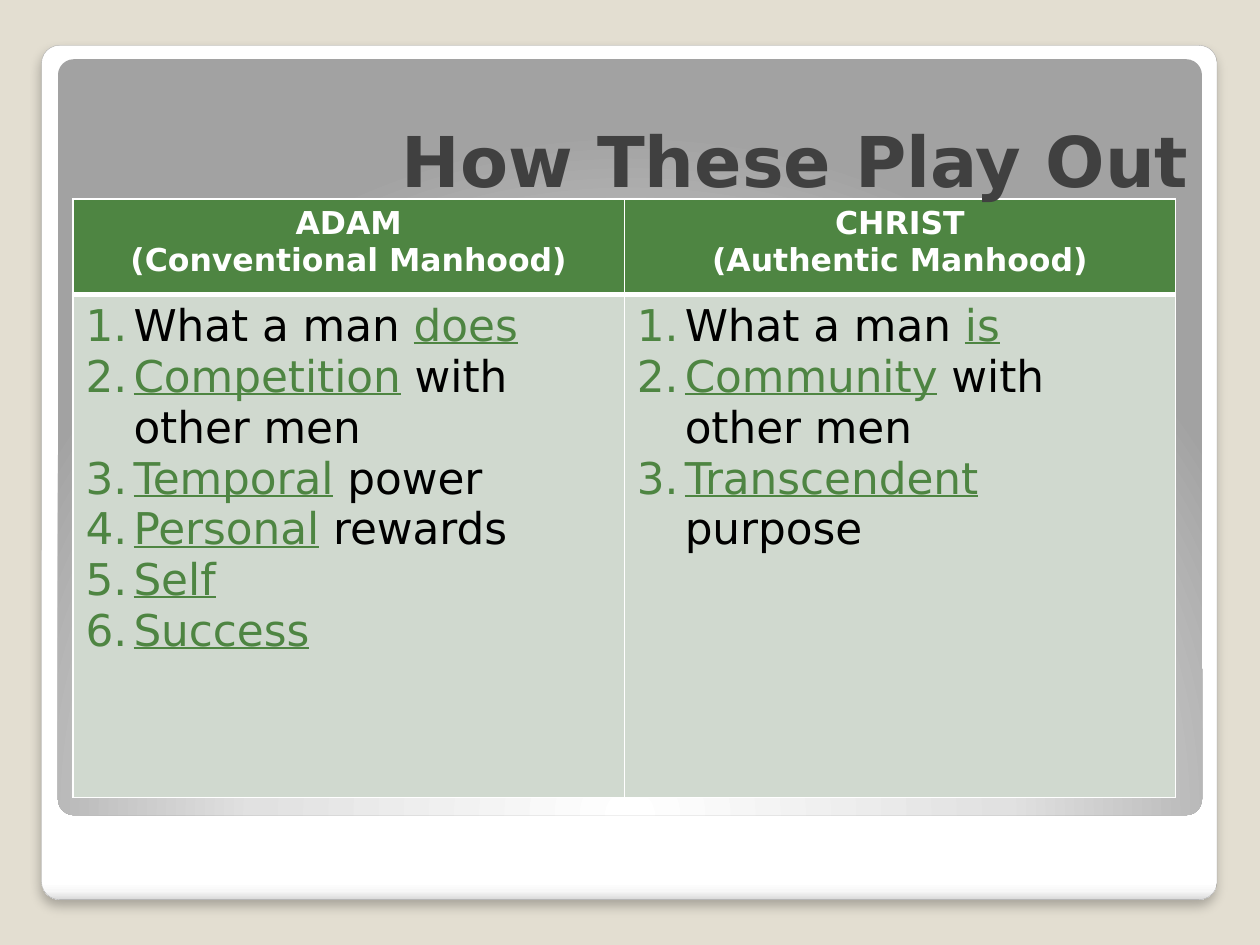
from lxml import etree
from pptx import Presentation
from pptx.dml.color import RGBColor
from pptx.enum.shapes import MSO_SHAPE
from pptx.enum.text import MSO_ANCHOR, PP_ALIGN
from pptx.oxml.ns import qn
from pptx.util import Inches, Pt

ROUND_RECT = MSO_SHAPE.ROUNDED_RECTANGLE
CENTER, RIGHT = PP_ALIGN.CENTER, PP_ALIGN.RIGHT
BOTTOM = MSO_ANCHOR.BOTTOM

FONT = "DejaVu Sans"
GREEN, PALE, WHITE, BLACK = "4E8542", "D0D9CF", "FFFFFF", "000000"

TITLE = "How These Play Out"
# Each column: heading lines, then numbered items; "_" encloses key words.
COLUMNS = [
    (["ADAM", "(Conventional Manhood)"],
     ["What a man _does_", "_Competition_ with other men", "_Temporal_ power",
      "_Personal_ rewards", "_Self_", "_Success_"]),
    (["CHRIST", "(Authentic Manhood)"],
     ["What a man _is_", "_Community_ with other men",
      "_Transcendent_ purpose"]),
]
CARD = (0.33, 0.36, 9.33, 6.78)
PANEL = (0.46, 0.47, 9.08, 6)
TABLE = (0.58, 1.58, 8.75, 4.75)
TITLE_BOX = (0.58, 0.5, 8.95, 1.15)
HEADER_HEIGHT = 0.76
INDENT = 0.38


def rgb(color):
    return RGBColor.from_string(color)


def box(lengths):
    return [Inches(v) for v in lengths]


def add(parent, tag, **attrs):
    el = etree.SubElement(parent, qn(tag))
    for name, value in attrs.items():
        el.set(name, str(value))
    return el


def add_color(parent, color):
    return add(parent, "a:srgbClr", val=color)


def gradient_fill(sp, stops):
    """Give the shape gradient stops; return the element for its direction."""
    sp.fill.background()
    no_fill = sp._element.spPr.find(qn("a:noFill"))
    grad = etree.Element(qn("a:gradFill"), rotWithShape="1")
    no_fill.getparent().replace(no_fill, grad)
    stop_list = add(grad, "a:gsLst")
    for pos, color in stops:
        add_color(add(stop_list, "a:gs", pos=pos * 1000), color)
    return grad


def add_round_rect(slide, lengths):
    sp = slide.shapes.add_shape(ROUND_RECT, *box(lengths))
    sp.adjustments[0] = 0.021
    sp.shadow.inherit = False
    sp.line.fill.background()
    return sp


def add_run(p, text, size, color, bold=False, underline=False):
    r = p.add_run()
    r.text = text
    r.font.name, r.font.size = FONT, Pt(size)
    r.font.bold, r.font.underline = bold, underline
    r.font.color.rgb = rgb(color)


def paragraphs(tf, count):
    return [tf.paragraphs[0]] + [tf.add_paragraph() for _ in range(count - 1)]


def number(p):
    pPr = p._p.get_or_add_pPr()
    pPr.set("marL", str(Inches(INDENT)))
    pPr.set("indent", str(-Inches(INDENT)))
    add_color(add(pPr, "a:buClr"), GREEN)
    add(pPr, "a:buFont", typeface=FONT)
    add(pPr, "a:buAutoNum", type="arabicPeriod")


def style_cell(cell, fill, top=1, bottom=1):
    cell.fill.solid()
    cell.fill.fore_color.rgb = rgb(fill)
    tcPr = cell._tc.get_or_add_tcPr()
    for i, (side, width) in enumerate(zip("LRTB", (1, 1, top, bottom))):
        ln = add(tcPr, f"a:ln{side}", w=Pt(width))
        add_color(add(ln, "a:solidFill"), WHITE)
        tcPr.insert(i, ln)


def add_background(slide):
    slide.background.fill.solid()
    slide.background.fill.fore_color.rgb = rgb("E3DED1")

    card = add_round_rect(slide, CARD)
    grad = gradient_fill(card, [(0, WHITE), (98, WHITE), (99, "F7F7F7"), (100, "DADADA")])
    add(grad, "a:lin", ang=90 * 60000, scaled=0)
    card.line.color.rgb = rgb("A4A4A4")
    card.line.width = Pt(0.16)
    effects = card._element.spPr.find(qn("a:effectLst"))
    shadow = add(effects, "a:outerShdw", blurRad=Pt(6), dist=Pt(4),
                 dir=90 * 60000, algn="tl", rotWithShape=0)
    add(add_color(shadow, BLACK), "a:alpha", val=25000)

    panel = add_round_rect(slide, PANEL)
    grad = gradient_fill(panel, [(0, WHITE), (55, "E1E1E1"), (100, "A2A2A2")])
    add(add(grad, "a:path", path="circle"), "a:fillToRect",
        l=50000, t=175000, r=50000, b=-75000)


def add_comparison(slide):
    table = slide.shapes.add_table(2, len(COLUMNS), *box(TABLE)).table
    table.horz_banding = False
    table.rows[0].height = Inches(HEADER_HEIGHT)
    table.rows[1].height = Inches(TABLE[3] - HEADER_HEIGHT)
    for col, (heading, items) in enumerate(COLUMNS):
        head, body = table.cell(0, col), table.cell(1, col)
        style_cell(head, GREEN, bottom=3)
        style_cell(body, PALE, top=3)
        for p, line in zip(paragraphs(head.text_frame, len(heading)), heading):
            p.alignment = CENTER
            add_run(p, line, 18, WHITE, bold=True)
        for p, item in zip(paragraphs(body.text_frame, len(items)), items):
            number(p)
            for i, part in enumerate(item.split("_")):
                key = i % 2 == 1
                if part:
                    add_run(p, part, 25, GREEN if key else BLACK, underline=key)


def add_title(slide):
    tf = slide.shapes.add_textbox(*box(TITLE_BOX)).text_frame
    tf.word_wrap = True
    tf.vertical_anchor = BOTTOM
    p = tf.paragraphs[0]
    p.alignment = RIGHT
    add_run(p, TITLE, 40, "404040", bold=True)


def main():
    prs = Presentation()
    prs.slide_width, prs.slide_height = Inches(10), Inches(7.5)
    slide = prs.slides.add_slide(prs.slide_layouts[6])
    add_background(slide)
    add_comparison(slide)
    add_title(slide)
    prs.save("out.pptx")


if __name__ == "__main__":
    main()
